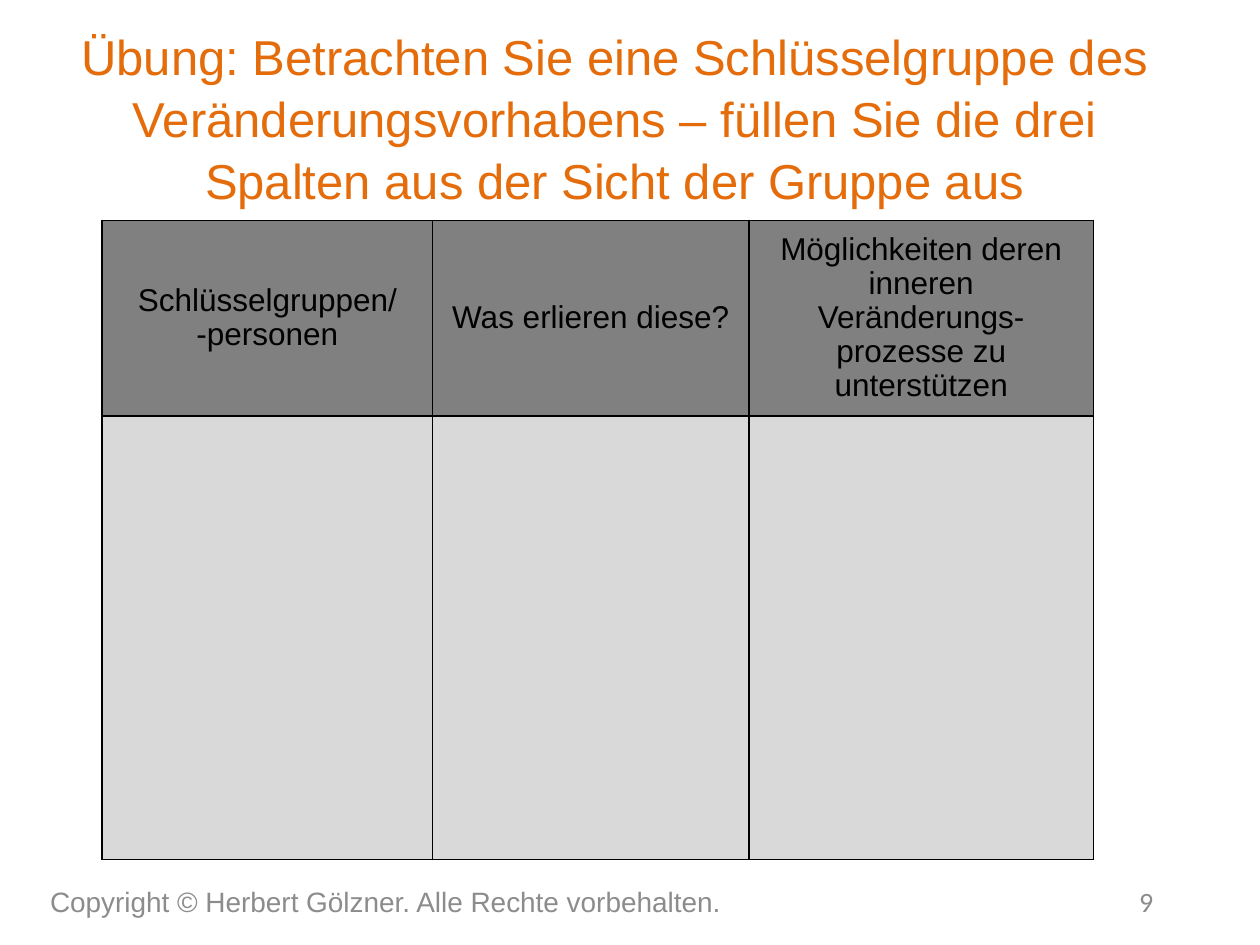
from dataclasses import dataclass

from lxml import etree
from pptx import Presentation
from pptx import util as u
from pptx.dml.color import RGBColor
from pptx.enum import text
from pptx.oxml import ns


@dataclass(frozen=True)
class Theme:
    title: str = "E46C0A"
    ink: str = "000000"
    muted: str = "8C8C8C"
    header_fill: str = "808080"
    body_fill: str = "D9D9D9"
    font: str = "Arial"
    number_font: str = "Calibri"
    title_size: int = 28
    table_size: int = 18
    footer_size: int = 16
    border: int = 1


@dataclass(frozen=True)
class FooterItem:
    content: str
    left: float
    width: float
    font: str
    alignment: text.PP_ALIGN


@dataclass(frozen=True)
class Column:
    heading: str
    width: float


THEME = Theme()
TITLE = (
    "Übung: Betrachten Sie eine Schlüsselgruppe des Veränderungsvorhabens – "
    "füllen Sie die drei Spalten aus der Sicht der Gruppe aus"
)
COLUMNS = [
    Column("Schlüsselgruppen/ -personen", 6.66),
    Column("Was erlieren diese?", 6.38),
    Column("Möglichkeiten deren inneren Veränderungs-prozesse zu unterstützen", 6.94),
]
ROW_HEIGHTS = [3.81, 8.94]
FOOTER = [
    FooterItem("Copyright © Herbert Gölzner. Alle Rechte vorbehalten.",
               0.76, 16.15, THEME.font, text.PP_ALIGN.LEFT),
    FooterItem("9", 17.58, 5.92, THEME.number_font, text.PP_ALIGN.RIGHT),
]


def write(frame, content: str, size: int, color: str, alignment: text.PP_ALIGN,
          font: str = THEME.font, line_spacing: float = 1.0) -> None:
    frame.text = content
    frame.word_wrap = True
    paragraph = frame.paragraphs[0]
    paragraph.alignment = alignment
    paragraph.line_spacing = line_spacing
    paragraph.font.name = font
    paragraph.font.size = u.Pt(size)
    paragraph.font.color.rgb = RGBColor.from_string(color)


def add_title(slide) -> None:
    title = slide.shapes.title
    title.left, title.top = u.Cm(1.27), u.Cm(0.76)
    title.width, title.height = u.Cm(22.23), u.Cm(3.18)
    frame = title.text_frame
    write(frame, TITLE, THEME.title_size, THEME.title, text.PP_ALIGN.CENTER,
          line_spacing=1.05)
    frame.auto_size = text.MSO_AUTO_SIZE.NONE
    frame.vertical_anchor = text.MSO_ANCHOR.MIDDLE


def style_cell(cell, fill: str) -> None:
    """Give the cell a fill and a thin line on all four sides."""
    properties = cell._tc.get_or_add_tcPr()
    for side in ("lnL", "lnR", "lnT", "lnB"):
        line = etree.SubElement(properties, ns.qn(f"a:{side}"), w=str(u.Pt(THEME.border)))
        solid = etree.SubElement(line, ns.qn("a:solidFill"))
        etree.SubElement(solid, ns.qn("a:srgbClr"), val=THEME.ink)
    cell.fill.solid()
    cell.fill.fore_color.rgb = RGBColor.from_string(fill)
    cell.vertical_anchor = text.MSO_ANCHOR.MIDDLE


def add_group_table(slide) -> None:
    width = sum(column.width for column in COLUMNS)
    table = slide.shapes.add_table(
        len(ROW_HEIGHTS), len(COLUMNS),
        u.Cm(2.06), u.Cm(4.44), u.Cm(width), u.Cm(sum(ROW_HEIGHTS))).table
    for row, height in zip(table.rows, ROW_HEIGHTS):
        row.height = u.Cm(height)
    for index, column in enumerate(COLUMNS):
        table.columns[index].width = u.Cm(column.width)
        header, body = table.cell(0, index), table.cell(1, index)
        style_cell(header, THEME.header_fill)
        style_cell(body, THEME.body_fill)
        write(header.text_frame, column.heading, THEME.table_size, THEME.ink,
              text.PP_ALIGN.CENTER, line_spacing=0.97)
        header.text_frame.paragraphs[0].font.bold = False


def add_footer_item(slide, item: FooterItem) -> None:
    box = slide.shapes.add_textbox(
        u.Cm(item.left), u.Cm(17.65), u.Cm(item.width), u.Cm(1.02))
    write(box.text_frame, item.content, THEME.footer_size, THEME.muted,
          item.alignment, item.font)
    box.text_frame.vertical_anchor = text.MSO_ANCHOR.MIDDLE


def main() -> None:
    presentation = Presentation()
    presentation.slide_width, presentation.slide_height = u.Cm(25.4), u.Cm(19.05)
    slide = presentation.slides.add_slide(presentation.slide_layouts[5])
    add_title(slide)
    for item in FOOTER:
        add_footer_item(slide, item)
    add_group_table(slide)
    presentation.save("out.pptx")


if __name__ == "__main__":
    main()
